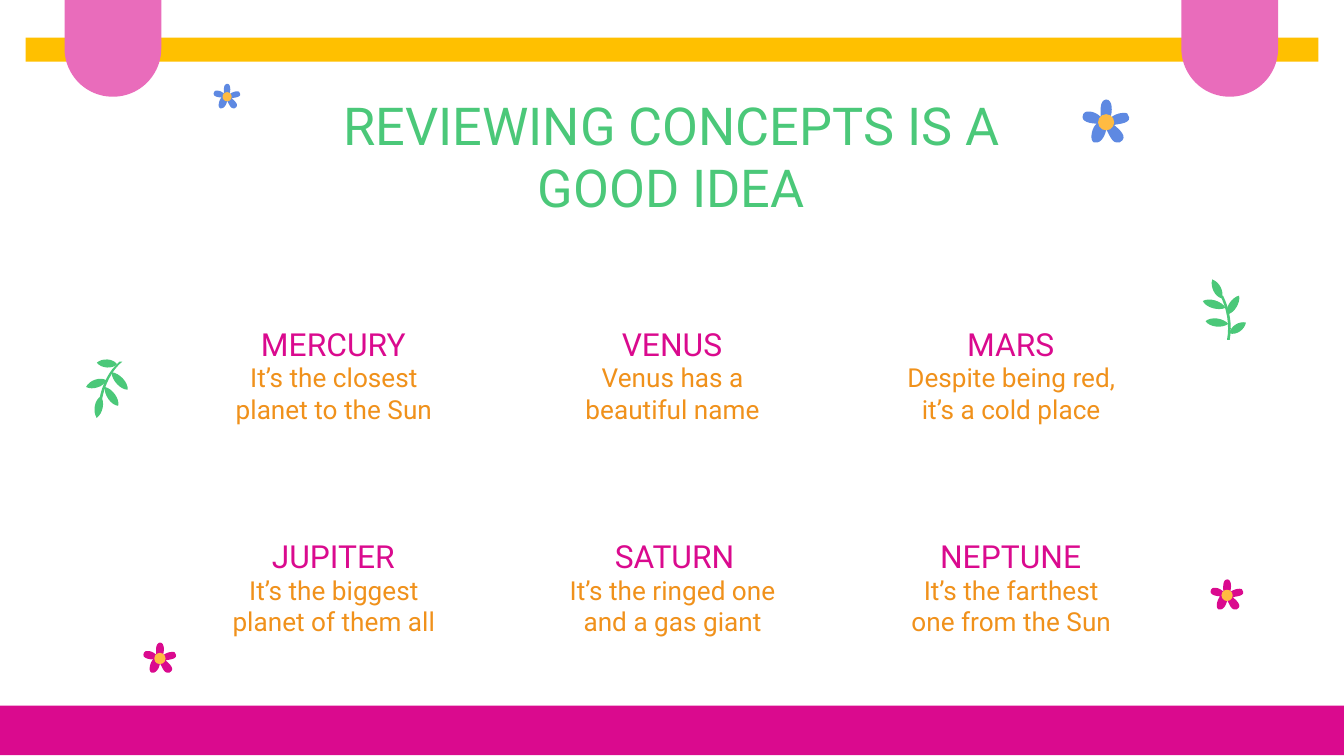
from pptx import Presentation
from pptx.dml.color import RGBColor
from pptx.enum import shapes, text
from pptx.util import Inches, Pt

PINK = RGBColor(0xDA, 0x0A, 0x8E)
LIGHT_PINK = RGBColor(0xE9, 0x6C, 0xBB)
YELLOW = RGBColor(0xFF, 0xC0, 0x00)
POLLEN = RGBColor(0xFF, 0xBB, 0x42)
BLUE = RGBColor(0x5E, 0x89, 0xE2)
GREEN = RGBColor(0x4B, 0xC8, 0x79)
ORANGE = RGBColor(0xF0, 0x91, 0x1B)
FONT = "Roboto"
STEPS = 8

# Flower outline around its centre, in hundredths of an inch at full size:
# each row holds two Bezier controls and the end point.
FLOWER_START = (0, -17)
FLOWER_CURVES = [
    ((-5, -16), (-4, -9), (-4, -4)),
    ((-6, -6), (-9, -8), (-13, -8)),
    ((-14, -8), (-16, -8), (-17, -6)),
    ((-20, 0), (-10, 1), (-7, 1)),
    ((-10, 3), (-13, 13), (-9, 15)),
    ((-9, 15), (-8, 15), (-7, 15)),
    ((-3, 15), (0, 8), (0, 5)),
    ((2, 8), (4, 15), (8, 15)),
    ((9, 15), (9, 15), (10, 15)),
    ((18, 11), (8, 4), (6, 2)),
    ((9, 1), (21, 1), (16, -6)),
    ((16, -7), (14, -7), (13, -7)),
    ((9, -7), (5, -5), (3, -3)),
    ((5, -8), (5, -17), (0, -17)),
]

prs = Presentation()
prs.slide_width = Inches(10)
prs.slide_height = prs.slide_width * 9 // 16
slide = prs.slides.add_slide(prs.slide_layouts[5])


def paint(shape, colour):
    shape.fill.solid()
    shape.fill.fore_color.rgb = colour
    shape.line.fill.background()
    shape.shadow.inherit = False


def add_curved(start, curves, colour):
    """Draw a closed outline of cubic Bezier curves, in inches."""
    points, here = [], start
    for c1, c2, end in curves:
        for step in range(1, STEPS + 1):
            t = step / STEPS
            s = 1 - t
            points.append([
                Inches(s**3 * a + 3 * s * s * t * b + 3 * s * t * t * c + t**3 * d)
                for a, b, c, d in zip(here, c1, c2, end)
            ])
        here = end
    outline = slide.shapes.build_freeform(Inches(start[0]), Inches(start[1]))
    outline.add_line_segments(points, close=True)
    paint(outline.convert_to_shape(), colour)


# Flowers: centre x, centre y, scale, petal colour
for x, y, scale, petals in [
    (9.13, 4.43, 0.7, PINK),
    (1.19, 4.9, 0.7, PINK),
    (8.23, 0.91, 1, BLUE),
    (1.69, 0.72, 0.57, BLUE),
]:
    unit = scale / 100
    start, *ends = [
        (x + px * unit, y + py * unit)
        for px, py in [FLOWER_START] + [p for curve in FLOWER_CURVES for p in curve]
    ]
    add_curved(start, list(zip(ends[::3], ends[1::3], ends[2::3])), petals)
    size = 0.12 * scale
    heart = slide.shapes.add_shape(
        shapes.MSO_SHAPE.OVAL, Inches(x - size / 2), Inches(y - size / 2),
        Inches(size), Inches(size))
    paint(heart, POLLEN)

# Sprigs: four Bezier points of the stem, then the two tips of each leaf
for stem, leaves in [
    (((9.08, 2.2), (9.13, 2.3), (9.15, 2.42), (9.13, 2.53)),
     [((8.95, 2.24), (9.12, 2.29)), ((9.13, 2.34), (9.22, 2.2)),
      ((8.97, 2.39), (9.14, 2.41)), ((9.15, 2.48), (9.27, 2.4)),
      ((9.09, 2.22), (9.02, 2.08))]),
    (((0.74, 2.97), (0.76, 2.86), (0.81, 2.76), (0.89, 2.69)),
     [((0.88, 3.02), (0.78, 2.88)), ((0.79, 2.83), (0.64, 2.88)),
      ((0.95, 2.9), (0.83, 2.77)), ((0.87, 2.71), (0.72, 2.7)),
      ((0.75, 2.95), (0.72, 3.11))]),
]:
    base, bend1, bend2, tip = stem
    edge = [(px + 0.02, py) for px, py in stem]
    add_curved(base, [(bend1, bend2, tip), (tip, edge[3], edge[3]),
                      (edge[2], edge[1], edge[0])], GREEN)
    for (x1, y1), (x2, y2) in leaves:
        dx, dy = x2 - x1, y2 - y1
        length = (dx * dx + dy * dy) ** 0.5
        bulge_x, bulge_y = -dy / length * 0.04, dx / length * 0.04
        near, far = (x1 + 0.2 * dx, y1 + 0.2 * dy), (x1 + 0.75 * dx, y1 + 0.75 * dy)
        add_curved((x1, y1), [
            ((near[0] + bulge_x, near[1] + bulge_y),
             (far[0] + bulge_x, far[1] + bulge_y), (x2, y2)),
            ((far[0] - bulge_x, far[1] - bulge_y),
             (near[0] - bulge_x, near[1] - bulge_y), (x1, y1)),
        ], GREEN)

# Text: the title placeholder, then a heading and a fact per planet
title = slide.shapes.title
title.left, title.top = Inches(1.99), Inches(0.59)
title.width, title.height = Inches(6.01), Inches(0.63)
TOP, MIDDLE = text.MSO_ANCHOR.TOP, text.MSO_ANCHOR.MIDDLE
blocks = [(title, "REVIEWING CONCEPTS IS A GOOD IDEA", 28, GREEN, TOP)]

# Heading, its left edge, fact
planets = [
    ("MERCURY", 1.47, "It’s the closest planet to the Sun"),
    ("VENUS", 3.99, "Venus has a beautiful name"),
    ("MARS", 6.51, "Despite being red, it’s a cold place"),
    ("JUPITER", 1.47, "It’s the biggest planet of them all"),
    ("SATURN", 4.01, "It’s the ringed one and a gas giant"),
    ("NEPTUNE", 6.51, "It’s the farthest one from the Sun"),
]
for i, (planet, left, fact) in enumerate(planets):
    row, column = divmod(i, 3)
    top = 2.38 + 1.58 * row
    for words, x, y, width, height, size, colour, anchor in [
        (planet, left, top, 2.02, 0.35, 17, PINK, MIDDLE),
        (fact, 1.57 + 2.52 * column, top + 0.21, 1.83, 1.08, 14, ORANGE, TOP),
    ]:
        box = slide.shapes.add_textbox(
            Inches(x), Inches(y), Inches(width), Inches(height))
        blocks.append((box, words, size, colour, anchor))

for box, words, size, colour, anchor in blocks:
    frame = box.text_frame
    frame.text = words
    frame.word_wrap = True
    frame.auto_size = text.MSO_AUTO_SIZE.NONE
    frame.vertical_anchor = anchor
    frame.margin_left = frame.margin_right = Inches(0.1)
    frame.margin_top = frame.margin_bottom = Inches(0.1)
    paragraph = frame.paragraphs[0]
    paragraph.alignment = text.PP_ALIGN.CENTER
    paragraph.font.name = FONT
    paragraph.font.size = Pt(size)
    paragraph.font.color.rgb = colour

# Bars and hanging tabs
RECTANGLE, TAB = shapes.MSO_SHAPE.RECTANGLE, shapes.MSO_SHAPE.FLOWCHART_DELAY
for kind, x, y, width, height, colour, turn in [
    (RECTANGLE, 0.19, 0.28, 9.62, 0.18, YELLOW, 0),
    (TAB, 0.48, 0, 0.72, 0.72, LIGHT_PINK, 90),
    (TAB, 8.79, 0, 0.72, 0.72, LIGHT_PINK, 90),
    (RECTANGLE, 0, 5.25, 10, 0.37, PINK, 0),
]:
    band = slide.shapes.add_shape(
        kind, Inches(x), Inches(y), Inches(width), Inches(height))
    band.rotation = turn
    paint(band, colour)

prs.save("out.pptx")
